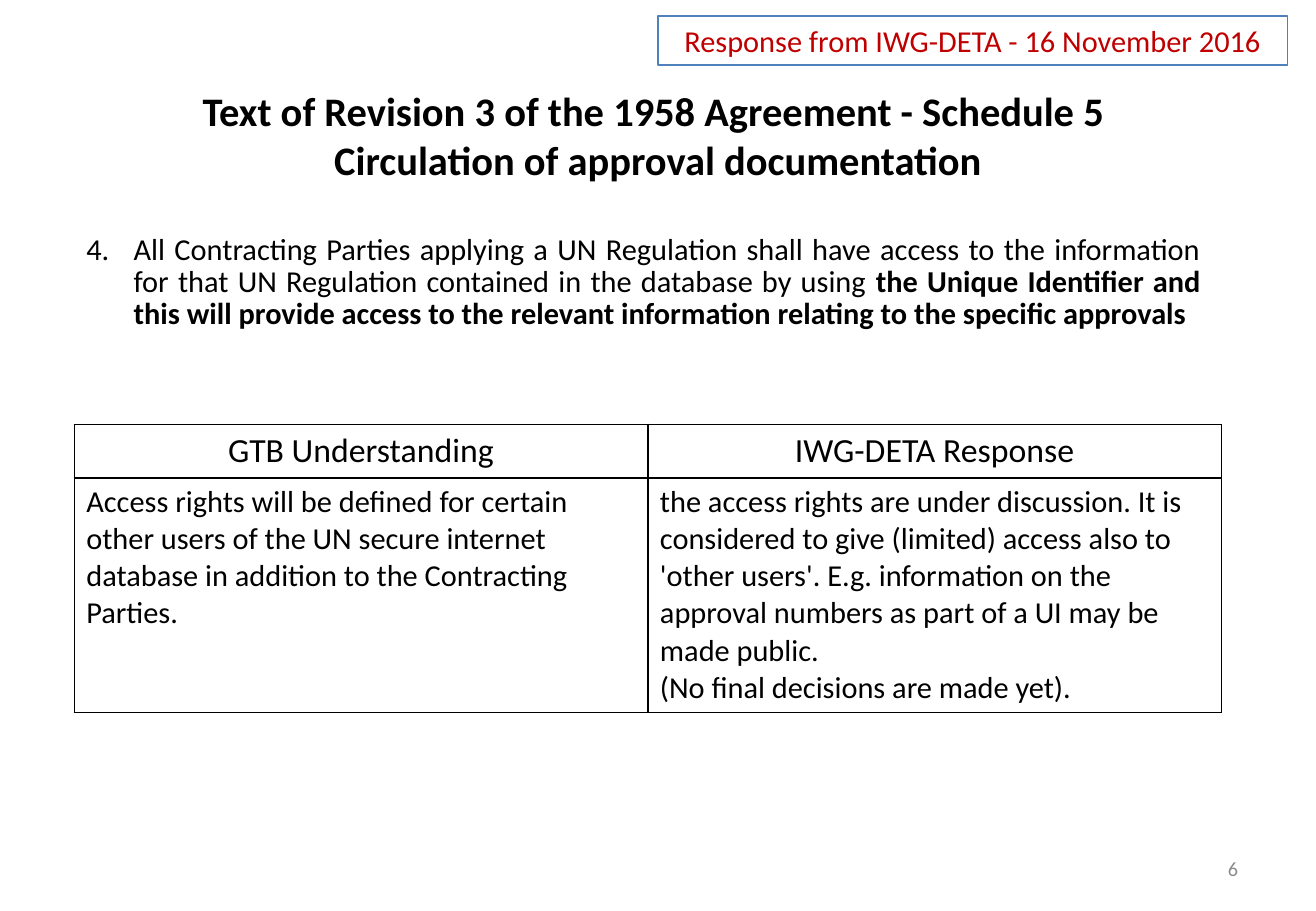
from lxml.etree import SubElement
from pptx import Presentation
from pptx.dml.color import RGBColor
from pptx.enum.shapes import MSO_SHAPE
from pptx.enum.text import MSO_ANCHOR, MSO_AUTO_SIZE, PP_ALIGN
from pptx.oxml.ns import qn
from pptx.util import Pt

BLACK, RED, BLUE, GREY = "000000", "C00000", "4F81BD", "8C8C8C"


def colour(hex_value):
    return RGBColor.from_string(hex_value)


def place(shape, box):
    shape.left, shape.top, shape.width, shape.height = [Pt(v) for v in box]


def style(paragraph, size, align=PP_ALIGN.LEFT, ink=BLACK, bold=False):
    paragraph.alignment = align
    paragraph.space_before = Pt(0)
    font = paragraph.font
    font.name, font.size, font.bold = "Calibri", Pt(size), bold
    font.color.rgb = colour(ink)


def fill_frame(frame, text, anchor=MSO_ANCHOR.TOP, **look):
    frame.text = text
    frame.word_wrap = True
    frame.auto_size = MSO_AUTO_SIZE.NONE
    frame.vertical_anchor = anchor
    for paragraph in frame.paragraphs:
        style(paragraph, **look)


def add_heading(slide, box):
    heading = slide.shapes.title
    place(heading, box)
    fill_frame(heading.text_frame,
               "Text of Revision 3 of the 1958 Agreement - Schedule 5 \n"
               "Circulation of approval documentation",
               size=24, align=PP_ALIGN.CENTER, bold=True)


def add_clause(slide, box, number):
    clause = slide.placeholders[1]
    place(clause, box)
    frame = clause.text_frame
    frame.word_wrap = True
    frame.auto_size = MSO_AUTO_SIZE.NONE
    paragraph = frame.paragraphs[0]
    paragraph.line_spacing = Pt(19.2)

    # Hanging number
    properties = paragraph._p.get_or_add_pPr()
    properties.set("marL", str(Pt(28)))
    properties.set("indent", str(-Pt(28)))
    SubElement(properties, qn("a:buFont"), typeface="+mj-lt")
    SubElement(properties, qn("a:buAutoNum"), type="arabicPeriod", startAt=str(number))
    style(paragraph, 18, PP_ALIGN.JUSTIFY)

    paragraph.add_run().text = (
        "All Contracting Parties applying a UN Regulation shall have access to the "
        "information for that UN Regulation contained in the database by using ")
    emphasis = paragraph.add_run()
    emphasis.text = ("the Unique Identifier and this will provide access to the "
                     "relevant information relating to the specific approvals")
    emphasis.font.bold = True


def add_borders(cell):
    properties = cell._tc.get_or_add_tcPr()
    for position, side in enumerate(("lnL", "lnR", "lnT", "lnB")):
        line = properties.makeelement(qn(f"a:{side}"), {"w": str(Pt(1))})
        fill = SubElement(line, qn("a:solidFill"))
        SubElement(fill, qn("a:srgbClr"), val=BLACK)
        properties.insert(position, line)


def add_comparison(slide, box):
    left, top, width, height = box
    header_height = 31.5
    rows = [
        ("GTB Understanding", "IWG-DETA Response"),
        ("Access rights will be defined for certain other users of the UN secure "
         "internet database in addition to the Contracting Parties.",
         "the access rights are under discussion. It is considered to give (limited) "
         "access also to 'other users'. E.g. information on the approval numbers as "
         "part of a UI may be made public.\n(No final decisions are made yet)."),
    ]
    looks = [dict(size=20, align=PP_ALIGN.CENTER), dict(size=18)]
    table = slide.shapes.add_table(2, 2, Pt(left), Pt(top), Pt(width), Pt(height)).table
    table.first_row = table.horz_banding = False
    table.rows[0].height = Pt(header_height)
    table.rows[1].height = Pt(height - header_height)
    for r, (texts, look) in enumerate(zip(rows, looks)):
        for c, text in enumerate(texts):
            cell = table.cell(r, c)
            cell.text = text
            cell.fill.background()
            add_borders(cell)
            for paragraph in cell.text_frame.paragraphs:
                style(paragraph, **look)


def add_response_label(slide, box):
    label = slide.shapes.add_shape(MSO_SHAPE.RECTANGLE, *[Pt(v) for v in box])
    label.shadow.inherit = False
    label.fill.background()
    label.line.color.rgb = colour(BLUE)
    label.line.width = Pt(0.75)
    fill_frame(label.text_frame, "Response from IWG-DETA - 16 November 2016",
               size=18, align=PP_ALIGN.CENTER, ink=RED)


def add_page_number(slide, box, number):
    page = slide.shapes.add_textbox(*[Pt(v) for v in box])
    fill_frame(page.text_frame, str(number), MSO_ANCHOR.MIDDLE,
               size=12, align=PP_ALIGN.RIGHT, ink=GREY)


def main():
    deck = Presentation()
    deck.slide_width, deck.slide_height = Pt(780), Pt(540)
    slide = deck.slides.add_slide(deck.slide_layouts[1])
    add_heading(slide, (0, 47.5, 780, 65.5))
    add_clause(slide, (44, 135, 675, 84), 4)
    add_comparison(slide, (44, 251.5, 680, 168))
    add_response_label(slide, (390, 9.5, 373, 29))
    add_page_number(slide, (559, 500.5, 182, 29), 6)
    deck.save("out.pptx")


if __name__ == "__main__":
    main()
